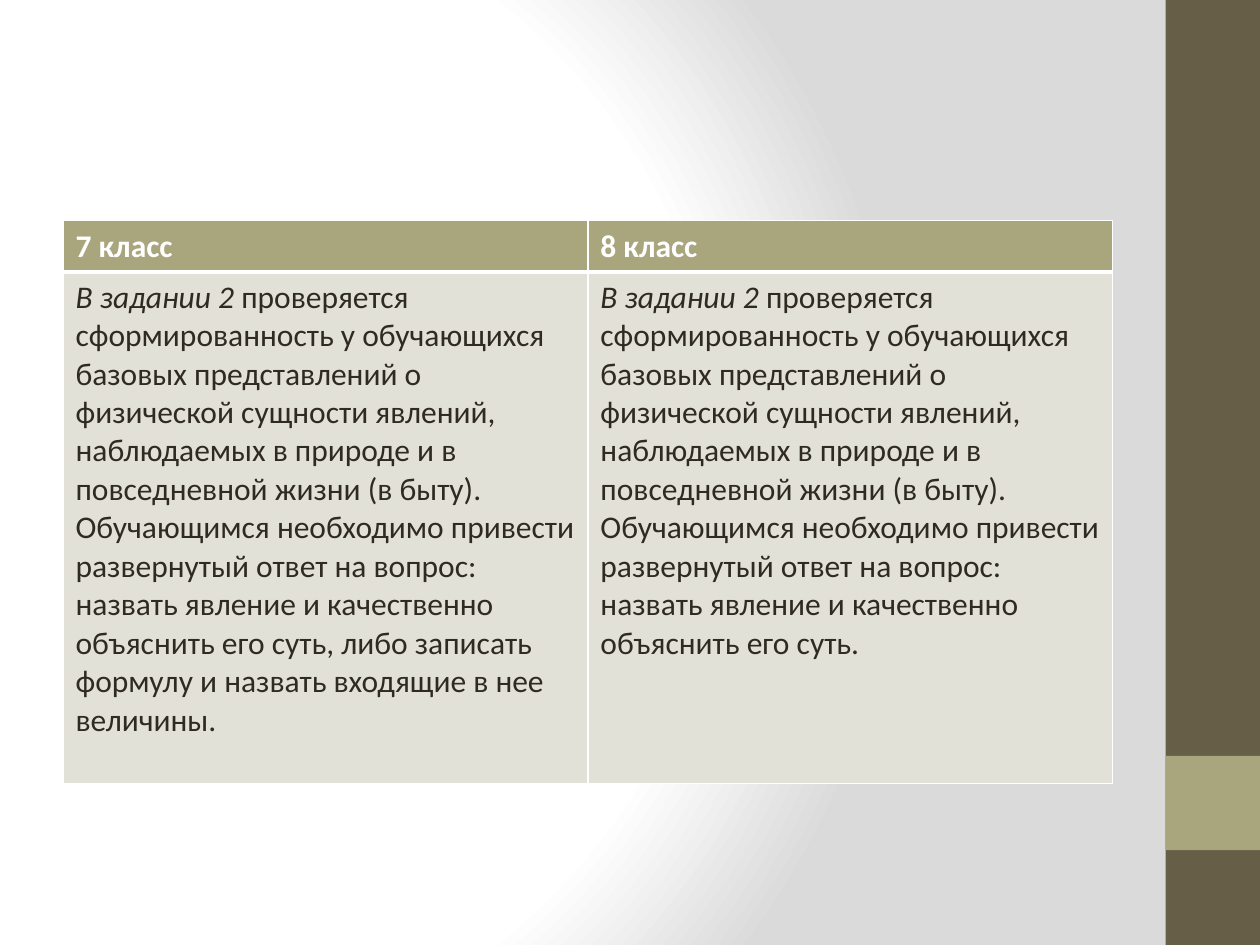
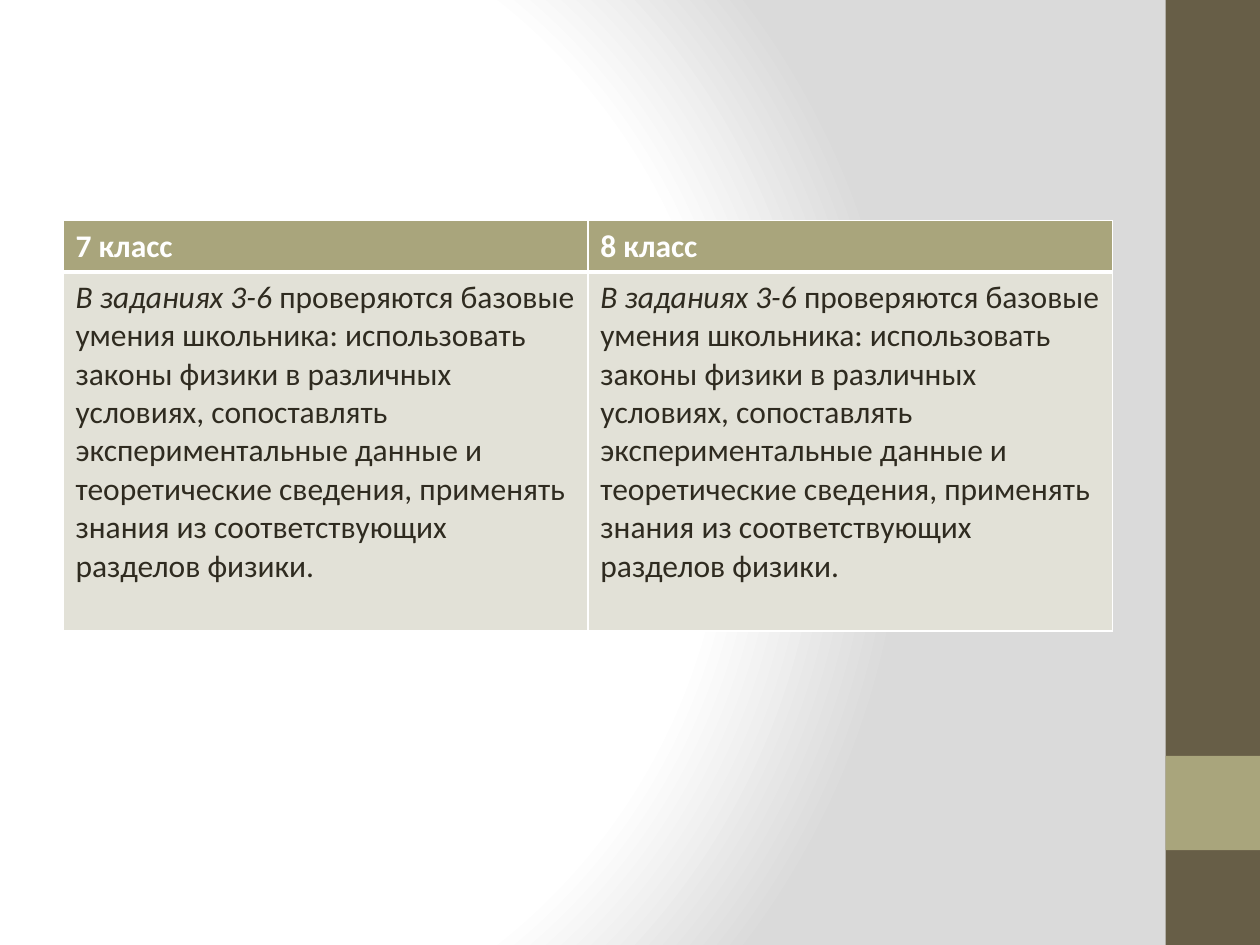
from lxml.etree import SubElement
from pptx import Presentation
from pptx.dml.color import RGBColor
from pptx.enum.shapes import MSO_SHAPE
from pptx.oxml import parse_xml
from pptx.oxml.ns import nsdecls, qn
from pptx.util import Cm, Pt

HEADS = ["7 класс", "8 класс"]
SENSE = (
    " проверяется сформированность у обучающихся базовых представлений о физической "
    "сущности явлений, наблюдаемых в природе и в повседневной жизни (в быту). "
    "Обучающимся необходимо привести развернутый ответ на вопрос: назвать явление "
    "и качественно объяснить его суть"
)
SKILLS = (
    " проверяются базовые умения школьника: использовать законы физики в различных "
    "условиях, сопоставлять экспериментальные данные и теоретические сведения, "
    "применять знания из соответствующих разделов физики."
)
SLIDES = [
    {
        "task": "В задании 2",
        "texts": [SENSE + ", либо записать формулу и назвать входящие в нее величины.", SENSE + "."],
        "height": Cm(10.31),
    },
    {"task": "В заданиях 3-6", "texts": [SKILLS, SKILLS], "height": Cm(7.24)},
]

WHITE = RGBColor(0xFF, 0xFF, 0xFF)
GREY = RGBColor(0xDA, 0xDA, 0xDA)
BROWN = RGBColor(0x67, 0x5E, 0x47)
OLIVE = RGBColor(0xA9, 0xA5, 0x7C)
PALE = RGBColor(0xE2, 0xE1, 0xD7)
INK = RGBColor(0x2F, 0x2B, 0x20)

WIDE, HIGH = Cm(25.4), Cm(19.05)
BAND = Cm(1.9)
LEFT, TOP = Cm(1.27), Cm(4.45)
COL, HEAD = Cm(10.58), Cm(1.03)
STOPS = [(0, WHITE), (75, WHITE), (100, GREY)]


def write(cell, text, color=INK, bold=False, italic=False, size=18):
    run = cell.text_frame.paragraphs[0].add_run()
    run.text = text
    font = run.font
    font.name, font.size = "Calibri", Pt(size)
    font.bold, font.italic = bold, italic
    font.color.rgb = color


def shade(slide):
    fill = slide.background.fill
    fill.gradient()
    old = next(slide.element.iter(qn("a:gradFill")))
    stops = "".join(
        f'<a:gs pos="{pos * 1000}"><a:srgbClr val="{color}"/></a:gs>' for pos, color in STOPS
    )
    new = parse_xml(
        f'<a:gradFill rotWithShape="1" {nsdecls("a")}><a:gsLst>{stops}</a:gsLst>'
        '<a:path path="circle"><a:fillToRect l="20000" t="50000" r="100000" b="50000"/>'
        "</a:path></a:gradFill>"
    )
    old.getparent().replace(old, new)


def block(slide, top, height, color):
    box = slide.shapes.add_shape(MSO_SHAPE.RECTANGLE, WIDE - BAND, top, BAND, height)
    box.shadow.inherit = False
    box.fill.solid()
    box.fill.fore_color.rgb = color
    box.line.fill.background()


def style(cell, color, top=1, low=1):
    props = cell._tc.get_or_add_tcPr()
    for side, width in {"L": 1, "R": 1, "T": top, "B": low}.items():
        line = SubElement(props, qn(f"a:ln{side}"), w=str(Pt(width)))
        solid = SubElement(line, qn("a:solidFill"))
        SubElement(solid, qn("a:srgbClr"), val=str(WHITE))
    cell.fill.solid()
    cell.fill.fore_color.rgb = color


def grid(slide, task, texts, height):
    frame = slide.shapes.add_table(2, len(HEADS), LEFT, TOP, COL * len(HEADS), HEAD + height)
    table = frame.table
    table.horz_banding = False
    table.rows[0].height, table.rows[1].height = HEAD, height
    for i, (head, text) in enumerate(zip(HEADS, texts)):
        table.columns[i].width = COL
        top, body = table.cell(0, i), table.cell(1, i)
        style(top, OLIVE, low=3)
        write(top, head, color=WHITE, bold=True)
        style(body, PALE, top=3)
        write(body, task, italic=True)
        write(body, text)


def main():
    deck = Presentation()
    deck.slide_width, deck.slide_height = WIDE, HIGH
    for data in SLIDES:
        slide = deck.slides.add_slide(deck.slide_layouts[6])
        shade(slide)
        block(slide, 0, HIGH, BROWN)
        block(slide, Cm(15.24), BAND, OLIVE)
        grid(slide, **data)
    deck.save("out.pptx")


if __name__ == "__main__":
    main()
